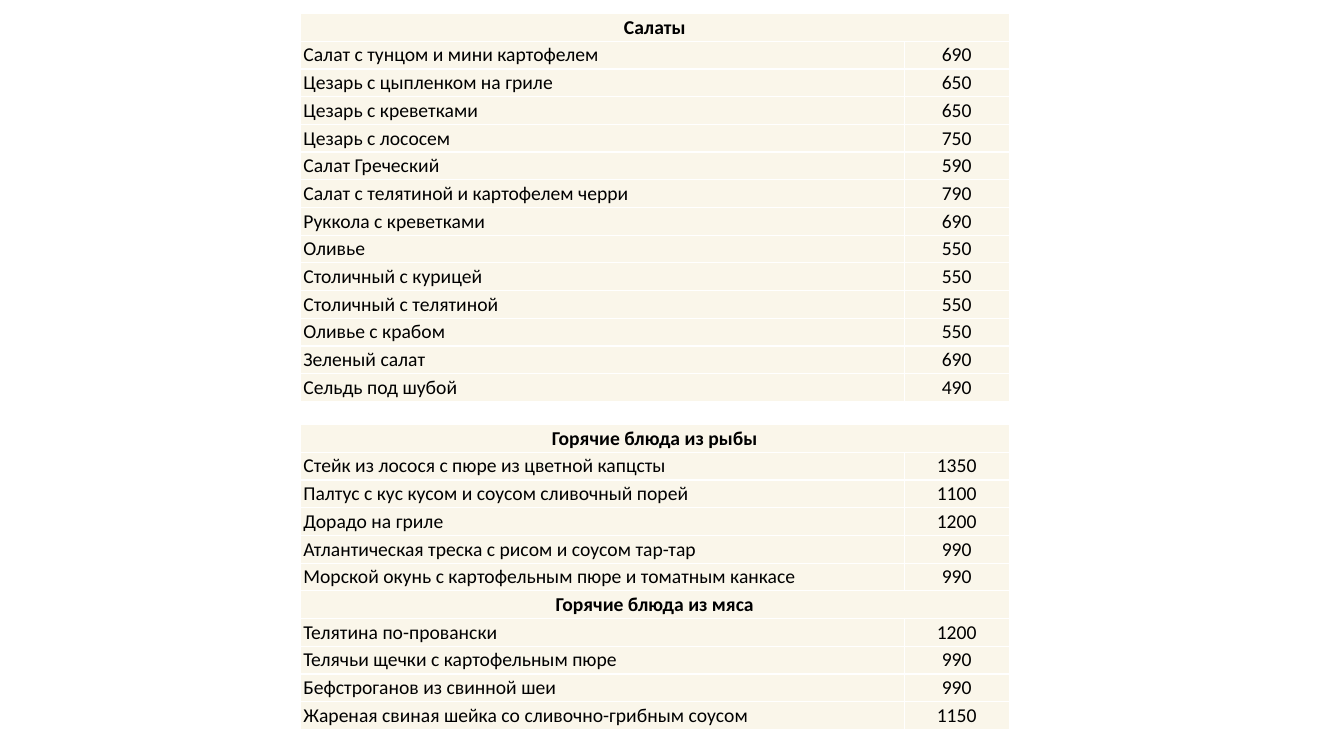
from lxml.etree import SubElement
from pptx import Presentation
from pptx.dml.color import RGBColor
from pptx.enum.text import MSO_ANCHOR, PP_ALIGN
from pptx.oxml.ns import qn
from pptx.util import Pt

CREAM = RGBColor(0xFA, 0xF6, 0xEA)
WHITE = RGBColor(0xFF, 0xFF, 0xFF)
BLACK = RGBColor(0x00, 0x00, 0x00)

MENU_LEFT = Pt(214.6)
COLUMN_WIDTHS = (Pt(431.3), Pt(74.9))
ROW_HEIGHT = Pt(19.8)

# A row with one entry is a section heading
SALADS = [
    ("Салаты",),
    ("Салат с тунцом и мини картофелем", 690),
    ("Цезарь с цыпленком на гриле", 650),
    ("Цезарь с креветками", 650),
    ("Цезарь с лососем", 750),
    ("Салат Греческий", 590),
    ("Салат с телятиной и картофелем черри", 790),
    ("Руккола с креветками", 690),
    ("Оливье", 550),
    ("Столичный с курицей", 550),
    ("Столичный с телятиной", 550),
    ("Оливье с крабом", 550),
    ("Зеленый салат", 690),
    ("Сельдь под шубой", 490),
]
HOT_DISHES = [
    ("Горячие блюда из рыбы",),
    ("Стейк из лосося с пюре из цветной капцсты", 1350),
    ("Палтус с кус кусом и соусом сливочный порей", 1100),
    ("Дорадо на гриле", 1200),
    ("Атлантическая треска с рисом и соусом тар-тар", 990),
    ("Морской окунь с картофельным пюре и томатным канкасе", 990),
    ("Горячие блюда из мяса",),
    ("Телятина по-провански", 1200),
    ("Телячьи щечки с картофельным пюре", 990),
    ("Бефстроганов из свинной шеи", 990),
    ("Жареная свиная шейка со сливочно-грибным соусом", 1150),
]


def write_text(cell, text, *, align=PP_ALIGN.LEFT, bold=False, size=Pt(14),
               color=BLACK, font="Calibri"):
    para = cell.text_frame.paragraphs[0]
    para.alignment = align
    span = para.add_run()
    span.text = text
    span.font.name = font
    span.font.size = size
    span.font.bold = bold
    span.font.color.rgb = color


def style_cell(cell):
    # Borders come before the fill in the cell properties
    properties = cell._tc.get_or_add_tcPr()
    for side in ("a:lnL", "a:lnR", "a:lnT", "a:lnB"):
        line = SubElement(properties, qn(side), w=str(Pt(1)))
        fill = SubElement(line, qn("a:solidFill"))
        SubElement(fill, qn("a:srgbClr"), val=str(WHITE))
    cell.fill.solid()
    cell.fill.fore_color.rgb = CREAM
    cell.vertical_anchor = MSO_ANCHOR.BOTTOM
    cell.margin_left = cell.margin_right = Pt(2.1)
    cell.margin_top = cell.margin_bottom = Pt(1.35)


def add_menu(page, top, dishes):
    frame = page.shapes.add_table(len(dishes), len(COLUMN_WIDTHS), MENU_LEFT, top,
                                  sum(COLUMN_WIDTHS), ROW_HEIGHT * len(dishes))
    table = frame.table
    table.first_row = False
    table.horz_banding = False
    for column, width in zip(table.columns, COLUMN_WIDTHS):
        column.width = width
    for cell in table.iter_cells():
        style_cell(cell)

    for index, (name, *price) in enumerate(dishes):
        table.rows[index].height = ROW_HEIGHT
        name_cell, price_cell = table.rows[index].cells
        if price:
            write_text(name_cell, name)
            write_text(price_cell, str(price[0]), align=PP_ALIGN.CENTER)
        else:
            name_cell.merge(price_cell)
            write_text(name_cell, name, align=PP_ALIGN.CENTER, bold=True)


def main():
    deck = Presentation()
    deck.slide_width, deck.slide_height = Pt(960), Pt(540)
    page = deck.slides.add_slide(deck.slide_layouts[6])
    add_menu(page, Pt(9.7), SALADS)
    add_menu(page, Pt(303.3), HOT_DISHES)
    deck.save("out.pptx")


if __name__ == "__main__":
    main()
